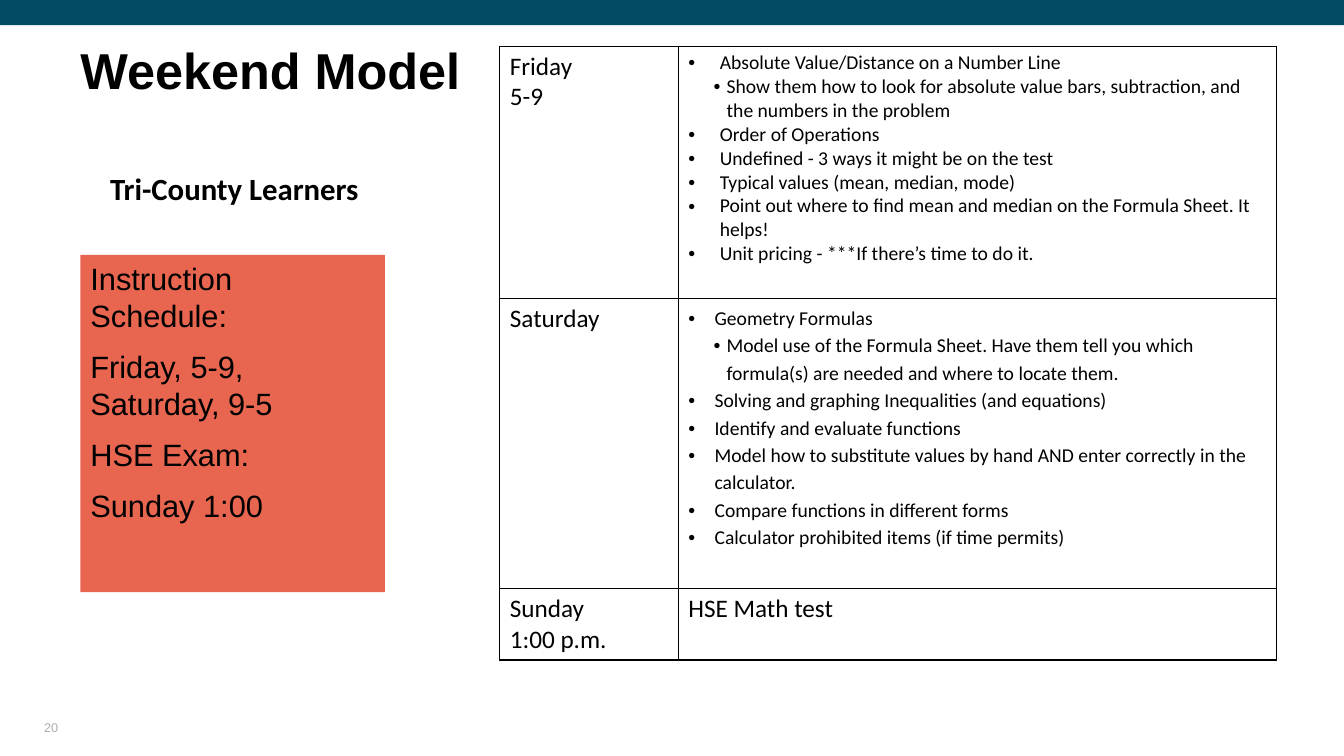
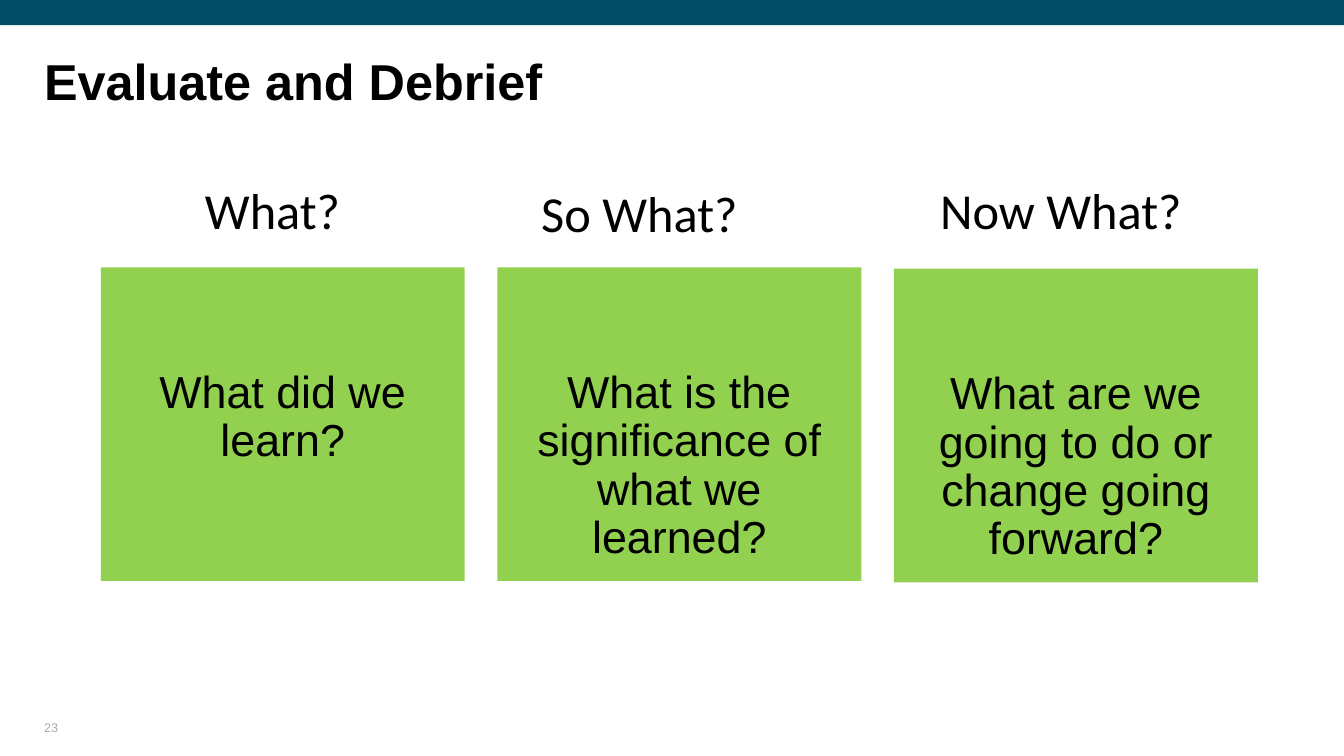
from dataclasses import dataclass

import pptx
import pptx.dml.color
import pptx.enum.shapes
import pptx.enum.text
import pptx.oxml.ns
import pptx.util
from lxml import etree

Pt = pptx.util.Pt
ALIGN = pptx.enum.text.PP_ALIGN
ANCHOR = pptx.enum.text.MSO_ANCHOR


@dataclass(frozen=True)
class Theme:
    width: float = 960
    height: float = 540
    band: str = "014B64"
    coral: str = "E86650"
    green: str = "92D050"
    ink: str = "000000"
    paper: str = "FFFFFF"
    muted: str = "AFABAB"
    heading_font: str = "Arial"
    body_font: str = "Calibri"
    title_size: float = 36
    question_size: float = 32
    schedule_size: float = 22
    cell_size: float = 18
    bullet_size: float = 14
    number_size: float = 9


THEME = Theme()

FRIDAY_TOPICS = [
    (0, "Absolute Value/Distance on a Number Line"),
    (1, "Show them how to look for absolute value bars, subtraction, and the numbers in the problem"),
    (0, "Order of Operations"),
    (0, "Undefined - 3 ways it might be on the test"),
    (0, "Typical values (mean, median, mode)"),
    (0, "Point out where to find mean and median on the Formula Sheet. It helps!"),
    (0, "Unit pricing - ***If there’s time to do it."),
]
SATURDAY_TOPICS = [
    (0, "Geometry Formulas"),
    (1, "Model use of the Formula Sheet. Have them tell you which formula(s) are needed and where to locate them."),
    (0, "Solving and graphing Inequalities (and equations)"),
    (0, "Identify and evaluate functions"),
    (0, "Model how to substitute values by hand AND enter correctly in the calculator."),
    (0, "Compare functions in different forms"),
    (0, "Calculator prohibited items (if time permits)"),
]
SCHEDULE = ["Instruction Schedule:", "Friday, 5-9, Saturday, 9-5", "HSE Exam:", "Sunday 1:00"]

# Heading, heading left and top, question, box top
DEBRIEF = [
    ("What?", 96.5, 124.5, "What did we learn?", 191),
    ("So What?", 358.5, 126.5, "What is the significance of what we learned?", 191),
    ("Now What?", 659.5, 124.5, "What are we going to do or change going forward?", 192),
]


def color(value):
    return pptx.dml.color.RGBColor.from_string(value)


# Text
def style(paragraph, size, font=THEME.body_font, ink=THEME.ink, bold=False):
    paragraph.font.size = Pt(size)
    paragraph.font.name = font
    paragraph.font.bold = bold
    paragraph.font.color.rgb = color(ink)


def write(frame, lines, size, align=ALIGN.LEFT, spacing=None, gap=0, **look):
    for index, line in enumerate(lines):
        paragraph = frame.paragraphs[0] if index == 0 else frame.add_paragraph()
        paragraph.text = line
        paragraph.alignment = align
        if spacing:
            paragraph.line_spacing = spacing
        if index and gap:
            paragraph.space_before = Pt(gap)
        style(paragraph, size, **look)


def write_bullets(frame, topics, indent, spacing):
    for index, (level, topic) in enumerate(topics):
        paragraph = frame.paragraphs[0] if index == 0 else frame.add_paragraph()
        paragraph.text = topic
        paragraph.level = level
        paragraph.line_spacing = spacing
        margin, hanging = (27.36, 9.36) if level else (indent, indent)
        properties = paragraph._p.get_or_add_pPr()
        properties.set("marL", str(Pt(margin)))
        properties.set("indent", str(-Pt(hanging)))
        for tag, name, value in (("a:buFont", "typeface", "Arial"), ("a:buChar", "char", "•")):
            etree.SubElement(properties, pptx.oxml.ns.qn(tag)).set(name, value)
        style(paragraph, THEME.bullet_size)


def set_margins(frame, horizontal, top, bottom):
    frame.margin_left = frame.margin_right = Pt(horizontal)
    frame.margin_top, frame.margin_bottom = Pt(top), Pt(bottom)


def add_text(slide, left, top, width, height, text, size, inset=True, anchor=ANCHOR.TOP, **look):
    shape = slide.shapes.add_textbox(Pt(left), Pt(top), Pt(width), Pt(height))
    frame = shape.text_frame
    frame.word_wrap = True
    frame.vertical_anchor = anchor
    if not inset:
        set_margins(frame, 0, 0, 0)
    write(frame, [text], size, **look)


# Filled rectangles
def add_box(slide, left, top, width, height, fill):
    shape = slide.shapes.add_shape(
        pptx.enum.shapes.MSO_SHAPE.RECTANGLE, Pt(left), Pt(top), Pt(width), Pt(height))
    shape.shadow.inherit = False
    shape.fill.solid()
    shape.fill.fore_color.rgb = color(fill)
    shape.line.fill.background()
    shape.text_frame.word_wrap = True
    shape.text_frame.vertical_anchor = ANCHOR.TOP
    return shape


# Band, title and number found on every slide
def add_slide(presentation, title, left, top, width, number):
    slide = presentation.slides.add_slide(presentation.slide_layouts[6])
    add_box(slide, 0, 0, THEME.width, 18, THEME.band)
    add_text(slide, left, top, width, 55, title, THEME.title_size, inset=False,
             spacing=0.9, font=THEME.heading_font, bold=True)
    add_text(slide, 31.5, 507.5, 216, 17.5, number, THEME.number_size, inset=False,
             anchor=ANCHOR.BOTTOM, font=THEME.heading_font, ink=THEME.muted)
    return slide


# Table
def format_cell(cell):
    properties = cell._tc.get_or_add_tcPr()
    for side in ("L", "R", "T", "B"):
        border = etree.SubElement(properties, pptx.oxml.ns.qn(f"a:ln{side}"), w=str(Pt(1)))
        fill = etree.SubElement(border, pptx.oxml.ns.qn("a:solidFill"))
        etree.SubElement(fill, pptx.oxml.ns.qn("a:srgbClr"), val=THEME.ink)
    cell.fill.solid()
    cell.fill.fore_color.rgb = color(THEME.paper)


def add_plan_table(slide):
    widths, heights = (127.5, 427.5), (180, 207.5, 51)
    table = slide.shapes.add_table(
        len(heights), len(widths), Pt(357), Pt(33), Pt(sum(widths)), Pt(sum(heights))).table
    table.first_row = table.horz_banding = False
    for column, width in zip(table.columns, widths):
        column.width = Pt(width)
    for row, height in zip(table.rows, heights):
        row.height = Pt(height)
    for cell in table.iter_cells():
        format_cell(cell)

    for index, lines in enumerate((["Friday", "5-9"], ["Saturday"], ["Sunday", "1:00 p.m."])):
        write(table.cell(index, 0).text_frame, lines, THEME.cell_size)
    write_bullets(table.cell(0, 1).text_frame, FRIDAY_TOPICS, indent=22.5, spacing=1.0)
    write_bullets(table.cell(1, 1).text_frame, SATURDAY_TOPICS, indent=18.75, spacing=1.15)
    write(table.cell(2, 1).text_frame, ["HSE Math test"], THEME.cell_size)


# Slides
def build_weekend_model(presentation):
    slide = add_slide(presentation, "Weekend Model", 57.5, 33, 290, "20")
    add_text(slide, 71.5, 117.5, 217.5, 34, "Tri-County Learners", THEME.schedule_size, bold=True)
    schedule = add_box(slide, 57.5, 182, 217.5, 241, THEME.coral)
    write(schedule.text_frame, SCHEDULE, THEME.schedule_size, gap=10, font=THEME.heading_font)
    add_plan_table(slide)


def build_debrief(presentation):
    slide = add_slide(presentation, "Evaluate and Debrief", 31.5, 41, 893.5, "23")
    box_width, box_gap = 260, 23.3
    for index, (heading, left, top, question, box_top) in enumerate(DEBRIEF):
        box = add_box(slide, 72 + index * (box_width + box_gap), box_top, box_width, 224, THEME.green)
        set_margins(box.text_frame, 7.2, 73, 3.6)
        write(box.text_frame, [question], THEME.question_size, align=ALIGN.CENTER,
              spacing=0.9, font=THEME.heading_font)
        add_text(slide, left, top, 196.5, 51, heading, THEME.title_size, align=ALIGN.CENTER)


def main():
    presentation = pptx.Presentation()
    presentation.slide_width = Pt(THEME.width)
    presentation.slide_height = Pt(THEME.height)
    build_weekend_model(presentation)
    build_debrief(presentation)
    presentation.save("out.pptx")


if __name__ == "__main__":
    main()
